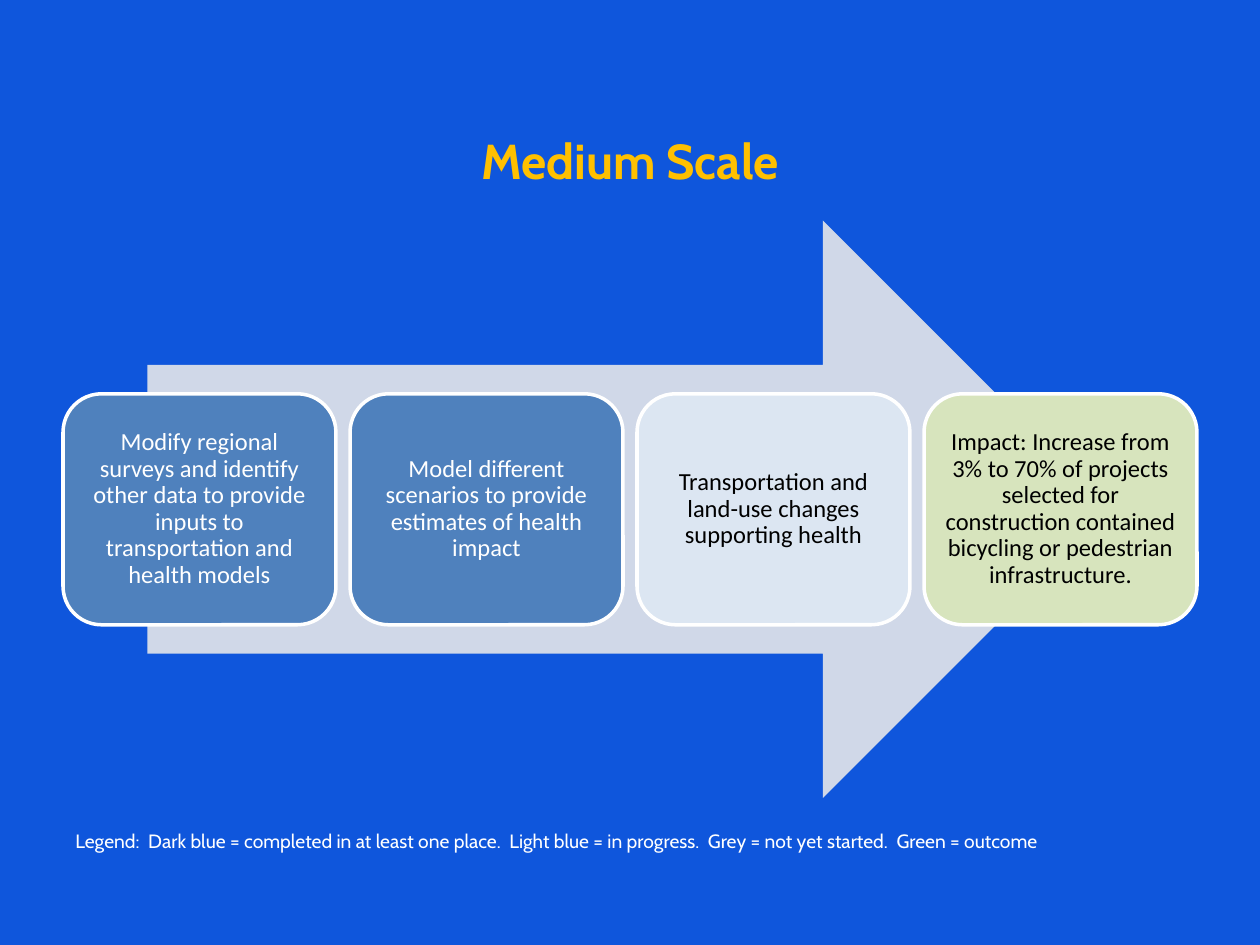
from pptx import Presentation
from pptx.dml.color import RGBColor
from pptx.enum.shapes import MSO_SHAPE
from pptx.enum.text import MSO_ANCHOR, PP_ALIGN
from pptx.util import Pt

ARROW, ROUND = MSO_SHAPE.RIGHT_ARROW, MSO_SHAPE.ROUNDED_RECTANGLE
MIDDLE, BOTTOM = MSO_ANCHOR.MIDDLE, MSO_ANCHOR.BOTTOM
LEFT, CENTER = PP_ALIGN.LEFT, PP_ALIGN.CENTER

# Content
COLORS = {"back": "0F56DC", "gold": "FFC000", "white": "FFFFFF", "black": "000000",
          "arrow": "D0D8E8", "done": "4F81BD", "active": "DCE6F2", "outcome": "D7E4BD"}
TITLE = "Medium Scale"
LEGEND = ("Legend:  Dark blue = completed in at least one place.  "
          "Light blue = in progress.  Grey = not yet started.  Green = outcome")
STEPS = [
    ("Modify regional surveys and identify other data to provide inputs to "
     "transportation and health models", "done", "white"),
    ("Model different scenarios to provide estimates of health impact", "done", "white"),
    ("Transportation and land-use changes supporting health", "active", "black"),
    ("Impact: Increase from 3% to 70% of projects selected for construction "
     "contained bicycling or pedestrian infrastructure.", "outcome", "black"),
]

# Layout in points
EDGE, SPAN = 36, 648
STEP_W, STEP_H = 156, 132
GAP = (SPAN - len(STEPS) * STEP_W) / (len(STEPS) - 1)
ARROW_X, ARROW_Y, ARROW_W, ARROW_H = 84.24, 126, 551, 330
STEP_Y = ARROW_Y + (ARROW_H - STEP_H) / 2

# Text formats
HEAD = {"font": {"name": "Cabin", "size": Pt(28), "bold": True},
        "para": {"alignment": CENTER, "line_spacing": Pt(30)},
        "frame": {"vertical_anchor": BOTTOM, "word_wrap": True}}
NOTE = {"font": {"name": "Cabin", "size": Pt(11)},
        "para": {"alignment": LEFT, "line_spacing": Pt(11)},
        "frame": {"vertical_anchor": BOTTOM, "word_wrap": True, "margin_bottom": Pt(16.8)}}
STEP = {"font": {"name": "Calibri", "size": Pt(14), "bold": False},
        "para": {"alignment": CENTER, "line_spacing": 0.9},
        "frame": {"vertical_anchor": MIDDLE, "word_wrap": True,
                  **{f"margin_{side}": Pt(4.2) for side in ("left", "top", "right", "bottom")}}}


def rgb(key):
    return RGBColor.from_string(COLORS[key])


def apply(item, values):
    for name, value in values.items():
        setattr(item, name, value)


def write(shape, text, style, color):
    frame = shape.text_frame
    frame.text = text
    para = frame.paragraphs[0]
    apply(frame, style["frame"])
    apply(para, style["para"])
    font = para.runs[0].font
    apply(font, style["font"])
    font.color.rgb = rgb(color)


def draw(slide, kind, box, fill):
    shape = slide.shapes.add_shape(kind, *map(Pt, box))
    shape.shadow.inherit = False
    shape.fill.solid()
    shape.fill.fore_color.rgb = rgb(fill)
    shape.line.fill.background()
    return shape


def main():
    deck = Presentation()
    deck.slide_width, deck.slide_height = Pt(720), Pt(540)
    slide = deck.slides.add_slide(deck.slide_layouts[5])
    slide.background.fill.solid()
    slide.background.fill.fore_color.rgb = rgb("back")

    # Title
    title = slide.shapes.title
    apply(title, {"left": Pt(EDGE), "top": Pt(21.6), "width": Pt(SPAN), "height": Pt(90)})
    write(title, TITLE, HEAD, "gold")

    # Arrow behind the steps
    draw(slide, ARROW, (ARROW_X, ARROW_Y, ARROW_W, ARROW_H), "arrow")

    # Steps
    for i, (text, fill, color) in enumerate(STEPS):
        left = EDGE + i * (STEP_W + GAP)
        card = draw(slide, ROUND, (left, STEP_Y, STEP_W, STEP_H), fill)
        card.line.color.rgb = rgb("white")
        card.line.width = Pt(2)
        write(card, text, STEP, color)

    # Legend
    legend = slide.shapes.add_textbox(Pt(EDGE), Pt(456), Pt(SPAN), Pt(48))
    write(legend, LEGEND, NOTE, "white")

    deck.save("out.pptx")


if __name__ == "__main__":
    main()
